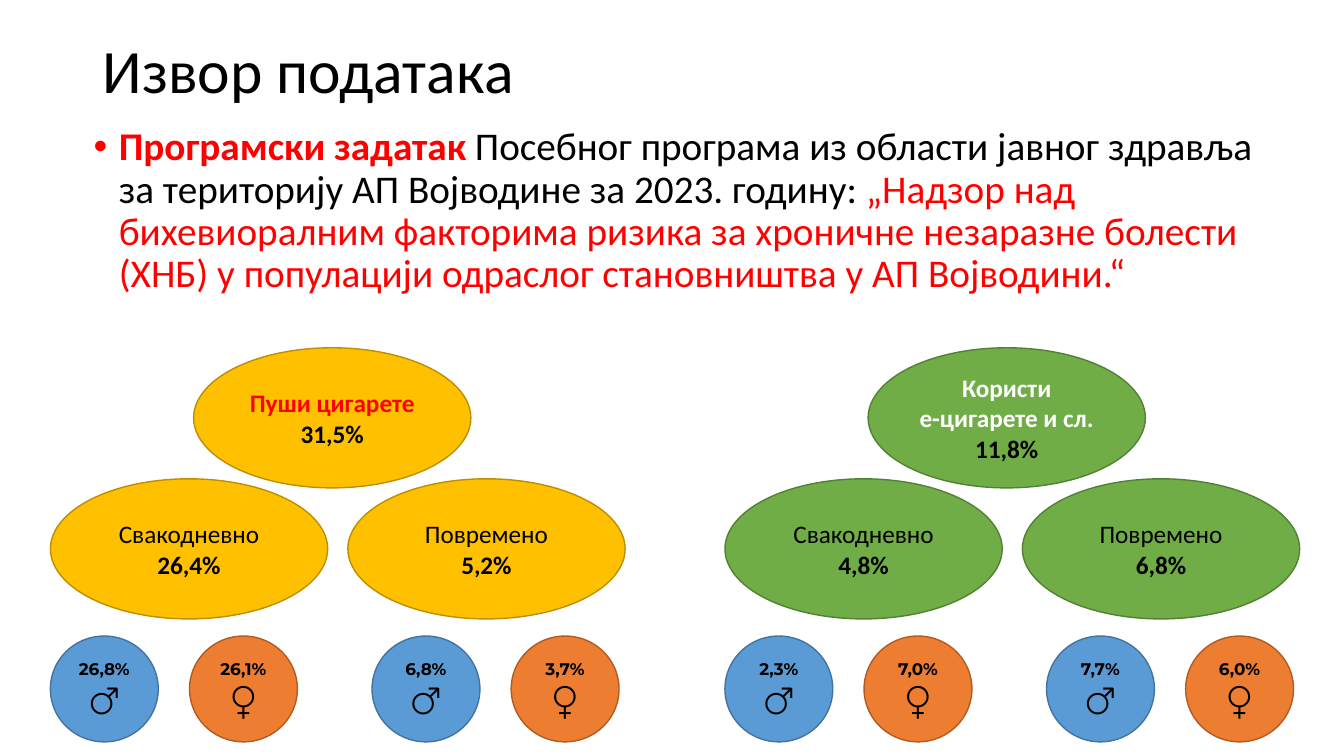
import pptx
import pptx.dml.color
import pptx.enum.shapes
import pptx.enum.text
import pptx.oxml.ns
import pptx.util
from lxml import etree

PX = 9144  # EMU per px, 100 px to the inch
THEME = {
    "text": "000000", "accent": "FF0000", "light": "FFFFFF",
    "yellow": ("FFC000", "BD8E00"), "green": ("70AD47", "538035"),
    "blue": ("5B9BD5", "43739E"), "orange": ("ED7D31", "AF5C24"),
    "title_size": 44, "body_size": 28, "oval_size": 18, "share_size": 12, "sign_size": 24,
    "font": "Calibri", "share_font": "Montserrat",
}


def set_font(font, size, color, bold=False, name=THEME["font"]):
    font.name = name
    font.size = pptx.util.Pt(size)
    font.bold = bold
    font.color.rgb = pptx.dml.color.RGBColor.from_string(color)


def add_oval(left, top, width, height, colors, lines):
    """Draw an ellipse; each line is (text, size, color, bold, font name)."""
    oval = slide.shapes.add_shape(
        pptx.enum.shapes.MSO_SHAPE.OVAL, left * PX, top * PX, width * PX, height * PX)
    oval.shadow.inherit = False
    fill, outline = colors
    oval.fill.solid()
    oval.fill.fore_color.rgb = pptx.dml.color.RGBColor.from_string(fill)
    oval.line.color.rgb = pptx.dml.color.RGBColor.from_string(outline)
    oval.line.width = pptx.util.Pt(1)
    frame = oval.text_frame
    frame.word_wrap = True
    frame.vertical_anchor = pptx.enum.text.MSO_ANCHOR.MIDDLE
    for index, (text, *style) in enumerate(lines):
        paragraph = frame.add_paragraph() if index else frame.paragraphs[0]
        paragraph.alignment = pptx.enum.text.PP_ALIGN.CENTER
        paragraph.add_run().text = text
        set_font(paragraph.font, *style)


presentation = pptx.Presentation()
presentation.slide_width = 1333 * PX
presentation.slide_height = 750 * PX
slide = presentation.slides.add_slide(presentation.slide_layouts[6])

title = slide.shapes.add_textbox(92 * PX, 0, 1150 * PX, 145 * PX).text_frame
title.word_wrap = True
title.vertical_anchor = pptx.enum.text.MSO_ANCHOR.MIDDLE
heading = title.paragraphs[0]
heading.line_spacing = 0.9
heading.add_run().text = "Извор података"
set_font(heading.font, THEME["title_size"], THEME["text"])

body = slide.shapes.add_textbox(83 * PX, 121 * PX, 1205 * PX, 186 * PX).text_frame
body.word_wrap = True
task = body.paragraphs[0]
task.line_spacing = 0.9
bullet_format = task._p.get_or_add_pPr()
bullet_format.set("marL", str(25 * PX))
bullet_format.set("indent", str(-25 * PX))
etree.SubElement(bullet_format, pptx.oxml.ns.qn("a:buFont")).set("typeface", "Arial")
etree.SubElement(bullet_format, pptx.oxml.ns.qn("a:buChar")).set("char", "•")
for text, color, bold in [
    ("Програмски задатак ", THEME["accent"], True),
    ("Посебног програма из области јавног здравља за територију АП Војводине "
     "за 2023. годину: ", THEME["text"], False),
    ("„Надзор над бихевиоралним факторима ризика за хроничне незаразне болести (ХНБ) "
     "у популацији одраслог становништва у АП Војводини.“", THEME["accent"], False),
]:
    run = task.add_run()
    run.text = text
    set_font(run.font, THEME["body_size"], color, bold)

OVAL_SIZE = (275, 139)
CIRCLE_SIZE = (107, 105)
CIRCLE_STEP = 138
# Offsets within a group: branch oval, then its pair of circles
BRANCH_OFFSETS = [("Свакодневно", 0, 0), ("Повремено", 295, 319)]
SEXES = [("♂", THEME["blue"]), ("♀", THEME["orange"])]

# Left edge, colours, label lines, label colour, total, (share, (men, women)) per branch
habits = [
    (50, THEME["yellow"], ["Пуши цигарете"], THEME["accent"], "31,5%",
     [("26,4%", ("26,8%", "26,1%")), ("5,2%", ("6,8%", "3,7%"))]),
    (719, THEME["green"], ["Користи", "е-цигарете и сл."], THEME["light"], "11,8%",
     [("4,8%", ("2,3%", "7,0%")), ("6,8%", ("7,7%", "6,0%"))]),
]
for left, colors, labels, label_color, total, branches in habits:
    total_lines = [(label, THEME["oval_size"], label_color, True) for label in labels]
    total_lines.append((total, THEME["oval_size"], THEME["text"], True))
    add_oval(left + 142, 345, *OVAL_SIZE, colors, total_lines)
    for (frequency, oval_offset, circle_offset), (share, by_sex) in zip(BRANCH_OFFSETS, branches):
        add_oval(left + oval_offset, 475, *OVAL_SIZE, colors, [
            (frequency, THEME["oval_size"], THEME["text"], False),
            (share, THEME["oval_size"], THEME["text"], True),
        ])
        for index, ((sign, sex_colors), sex_share) in enumerate(zip(SEXES, by_sex)):
            add_oval(left + circle_offset + index * CIRCLE_STEP, 631, *CIRCLE_SIZE, sex_colors, [
                (sex_share, THEME["share_size"], THEME["text"], True, THEME["share_font"]),
                (sign, THEME["sign_size"], THEME["text"], True, THEME["share_font"]),
            ])

presentation.save("out.pptx")
